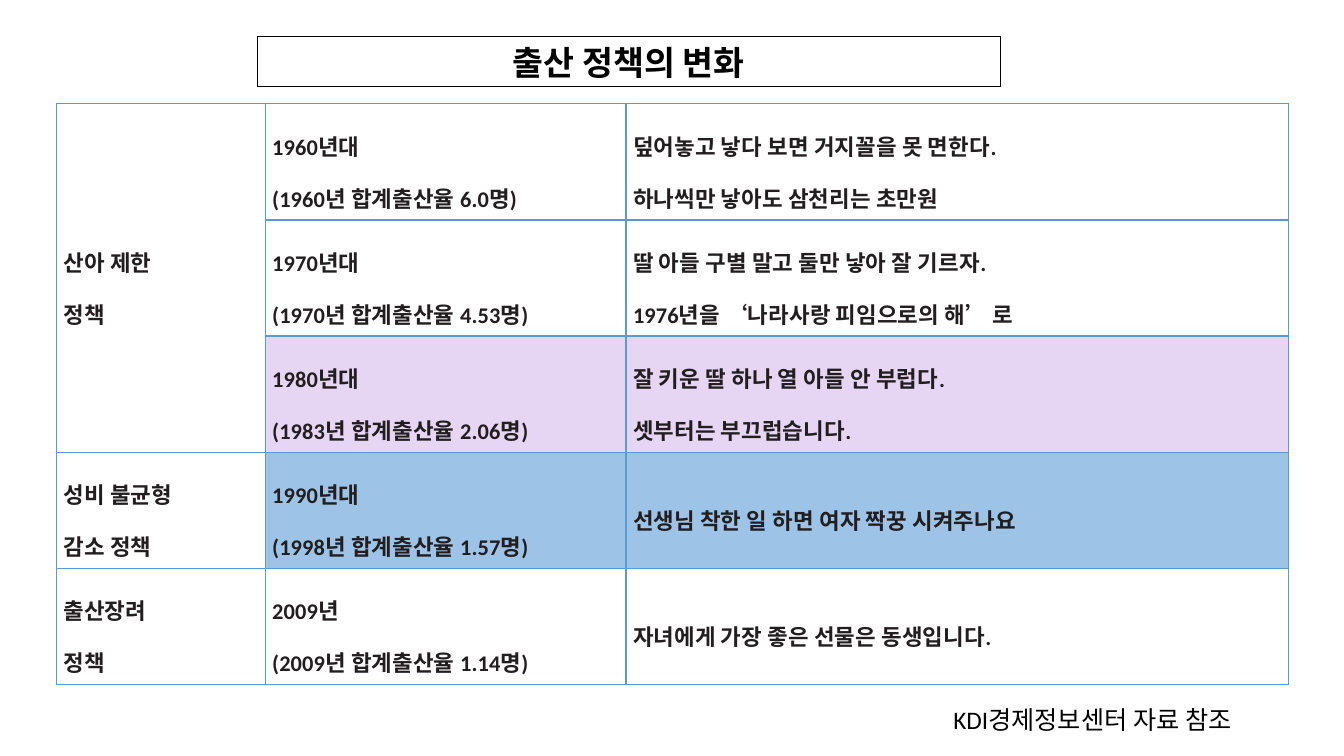
from lxml.etree import SubElement
from pptx import Presentation
from pptx.dml.color import RGBColor
from pptx.enum.shapes import MSO_SHAPE
from pptx.enum.text import MSO_ANCHOR, MSO_AUTO_SIZE, PP_ALIGN
from pptx.oxml.ns import qn
from pptx.util import Inches, Pt

COLORS = {
    "black": "000000",
    "body": "221E1F",
    "grid": "5B9BD5",
    "lilac": "E6D5F3",
    "sky": "9DC3E6",
}
FORMATS = {
    "title": {"size": Pt(24), "bold": True},
    "body": {"size": Pt(16), "bold": True},
    "source": {"size": Pt(18), "bold": False},
}
CELL_FORMAT = {
    "vertical_anchor": MSO_ANCHOR.MIDDLE,
    "margin_left": Inches(0.07),
    "margin_right": Inches(0.07),
    "margin_top": Inches(0.02),
    "margin_bottom": Inches(0.02),
}
BODY_PARAGRAPH = {"alignment": PP_ALIGN.JUSTIFY, "line_spacing": 1.6}

# Policy, period and slogans of each row; an empty policy continues the one above
POLICIES = [
    (["산아 제한 ", "정책"], ["1960년대", "(1960년 합계출산율 6.0명)"],
     ["덮어놓고 낳다 보면 거지꼴을 못 면한다. ", "하나씩만 낳아도 삼천리는 초만원"], None),
    ([], ["1970년대", "(1970년 합계출산율 4.53명)"],
     ["딸 아들 구별 말고 둘만 낳아 잘 기르자. ", "1976년을 ‘나라사랑 피임으로의 해’ 로"], None),
    ([], ["1980년대", "(1983년 합계출산율 2.06명)"],
     ["잘 키운 딸 하나 열 아들 안 부럽다. ", "셋부터는 부끄럽습니다."], "lilac"),
    (["성비 불균형 ", "감소 정책"], ["1990년대", "(1998년 합계출산율 1.57명)"],
     ["선생님 착한 일 하면 여자 짝꿍 시켜주나요"], "sky"),
    (["출산장려", "정책"], ["2009년", "(2009년 합계출산율 1.14명)"],
     ["자녀에게 가장 좋은 선물은 동생입니다."], None),
]


def assign(target, settings):
    for name, value in settings.items():
        setattr(target, name, value)


class PolicySlide:
    """Places elements by percent of the slide's width and height."""

    font = "Calibri"

    def __init__(self, deck):
        self.width, self.height = deck.slide_width, deck.slide_height
        self.shapes = deck.slides.add_slide(deck.slide_layouts[6]).shapes

    def x(self, percent):
        return round(self.width * percent / 100)

    def y(self, percent):
        return round(self.height * percent / 100)

    def area(self, left, top, width, height):
        return self.x(left), self.y(top), self.x(width), self.y(height)

    def color(self, name):
        return RGBColor.from_string(COLORS[name])

    def put_lines(self, frame, lines, style, color, paragraph_format, spacing=None):
        frame.word_wrap = True
        for index, line in enumerate(lines):
            paragraph = frame.add_paragraph() if index else frame.paragraphs[0]
            assign(paragraph, paragraph_format)
            run = paragraph.add_run()
            run.text = line
            assign(run.font, {"name": self.font, **FORMATS[style]})
            run.font.color.rgb = self.color(color)
            if spacing:
                run._r.get_or_add_rPr().set("spc", str(spacing))

    def framed_title(self, text, *area):
        title = self.shapes.add_shape(MSO_SHAPE.RECTANGLE, *self.area(*area))
        title.shadow.inherit = False
        title.fill.background()
        title.line.color.rgb = self.color("black")
        title.line.width = Pt(0.75)
        self.put_lines(title.text_frame, [text], "title", "black", {"alignment": PP_ALIGN.CENTER})
        title.text_frame.auto_size = MSO_AUTO_SIZE.SHAPE_TO_FIT_TEXT

    def note(self, text, *area):
        source = self.shapes.add_textbox(*self.area(*area))
        self.put_lines(source.text_frame, [text], "source", "black", {})
        source.text_frame.auto_size = MSO_AUTO_SIZE.SHAPE_TO_FIT_TEXT

    def border(self, cell):
        properties = cell._tc.get_or_add_tcPr()
        for side in ("a:lnL", "a:lnR", "a:lnT", "a:lnB"):
            line = SubElement(properties, qn(side), w=str(Pt(1)))
            SubElement(SubElement(line, qn("a:solidFill")), qn("a:srgbClr"), val=COLORS["grid"])

    def cell(self, cell, lines, fill):
        assign(cell, CELL_FORMAT)
        self.border(cell)
        if fill:
            cell.fill.solid()
            cell.fill.fore_color.rgb = self.color(fill)
        else:
            cell.fill.background()
        self.put_lines(cell.text_frame, lines, "body", "body", BODY_PARAGRAPH, spacing=10)

    def policy_table(self, policies, left, top, columns, row_height):
        area = self.area(left, top, sum(columns), row_height * len(policies))
        table = self.shapes.add_table(len(policies), len(columns), *area).table
        assign(table, {"first_row": False, "horz_banding": False})
        for column, width in zip(table.columns, columns):
            column.width = self.x(width)
        policy_start = 0
        for row, (policy, period, slogans, fill) in enumerate(policies):
            table.rows[row].height = self.y(row_height)
            for column, lines in enumerate((policy, period, slogans)):
                self.cell(table.cell(row, column), lines, fill if column else None)
            if policy:
                policy_start = row
            is_last = row + 1 == len(policies) or policies[row + 1][0]
            if is_last and row > policy_start:
                table.cell(policy_start, 0).merge(table.cell(row, 0))


def main():
    deck = Presentation()
    deck.slide_width, deck.slide_height = Inches(13.33), Inches(7.5)
    slide = PolicySlide(deck)

    # Policies by decade
    slide.policy_table(POLICIES, 4.2, 13.73, (15.53, 26.85, 49.3), 15.36)

    # Title and source
    slide.framed_title("출산 정책의 변화", 19.13, 4.8, 55.3, 6.7)
    slide.note("KDI경제정보센터 자료 참조", 70.2, 92.5, 27.8, 5.35)

    deck.save("out.pptx")


if __name__ == "__main__":
    main()
